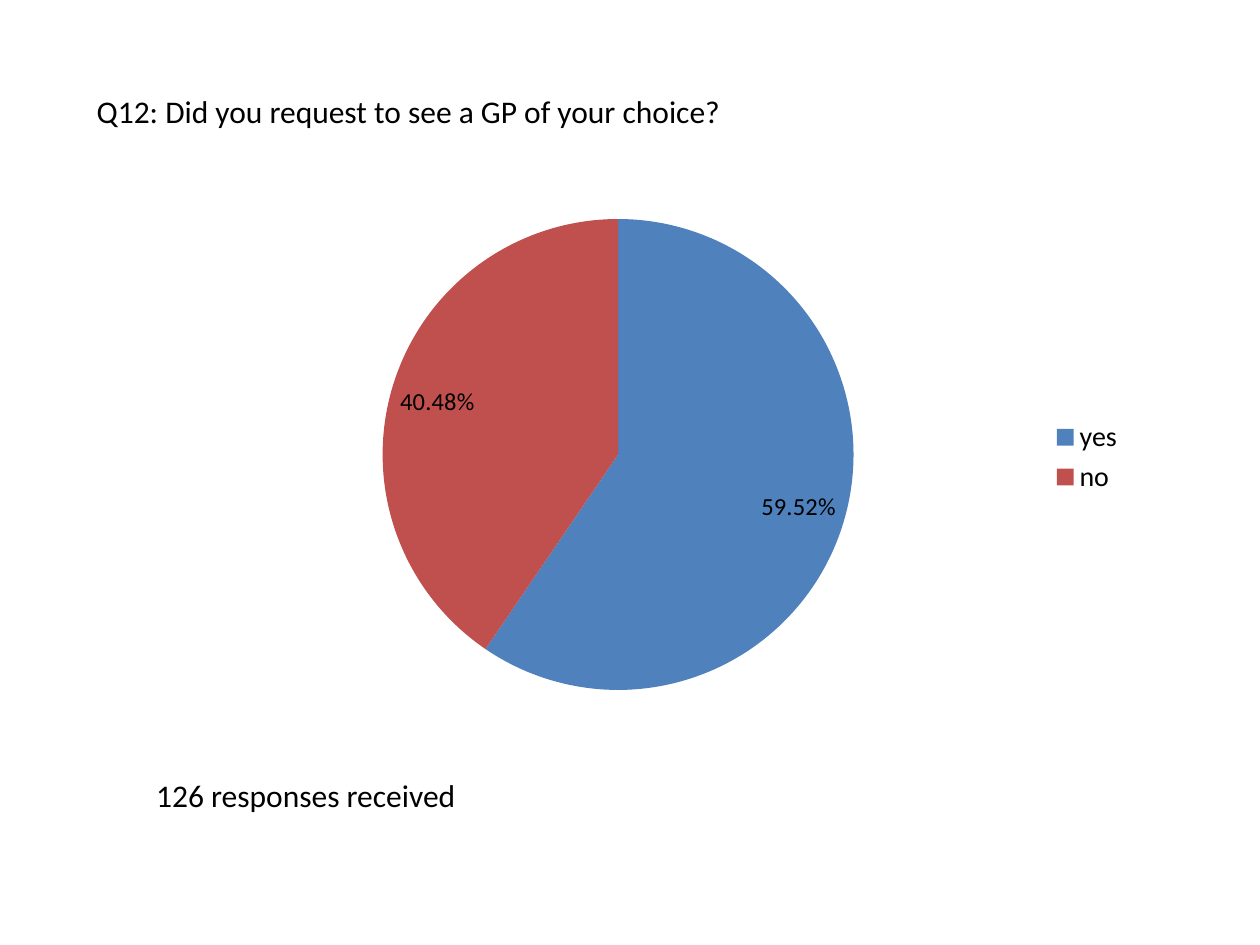
from dataclasses import dataclass

from lxml import etree
from pptx import Presentation
from pptx import util as u
from pptx.chart import data as cd
from pptx.dml import color as col
from pptx.enum import chart as ch, text as tx
from pptx.oxml import ns

FONT = "Calibri"
HUES = {"ink": "000000", "yes": "4F81BD", "no": "C0504D"}
VOTES = {"yes": 0.5952, "no": 0.4048}


@dataclass
class Note:
    words: str
    left: float
    top: float
    width: float


NOTES = [
    Note("Q12: Did you request to see a GP of your choice?", 1.7, 1.73, 20.4),
    Note("126 responses received", 2.9, 15.52, 19.6),
]


def tint(name: str) -> col.RGBColor:
    return col.RGBColor.from_string(HUES[name])


def style(font, size: int) -> None:
    font.name = FONT
    font.size = u.Pt(size)
    font.color.rgb = tint("ink")


def add_note(slide, note: Note) -> None:
    box = slide.shapes.add_textbox(
        u.Cm(note.left), u.Cm(note.top), u.Cm(note.width), u.Cm(1.02))
    frame = box.text_frame
    frame.word_wrap = True
    frame.auto_size = tx.MSO_AUTO_SIZE.SHAPE_TO_FIT_TEXT
    run = frame.paragraphs[0].add_run()
    run.text = note.words
    style(run.font, 18)


def set_plot(chart, **area: float) -> None:
    """Fix the inner plot area, in fractions of the chart frame."""
    plot = chart.plots[0]._element.getparent()
    for old in plot.findall(ns.qn("c:layout")):
        plot.remove(old)
    layout = etree.Element(ns.qn("c:layout"))
    plot.insert(0, layout)
    manual = etree.SubElement(layout, ns.qn("c:manualLayout"))
    parts = {"layoutTarget": "inner", "xMode": "edge", "yMode": "edge", **area}
    for tag, val in parts.items():
        etree.SubElement(manual, ns.qn(f"c:{tag}")).set("val", str(val))


def add_pie(slide) -> None:
    data = cd.CategoryChartData(number_format="0.00%")
    data.categories = list(VOTES)
    data.add_series("Series 1", list(VOTES.values()))
    chart = slide.shapes.add_chart(
        ch.XL_CHART_TYPE.PIE, u.Cm(3.91), u.Cm(4.11),
        u.Cm(19), u.Cm(10.21), data).chart
    chart.has_title = False
    style(chart.font, 10)
    set_plot(chart, x=0.2, y=0.03, w=0.5, h=0.93)

    # Legend
    chart.has_legend = True
    chart.legend.position = ch.XL_LEGEND_POSITION.RIGHT
    chart.legend.include_in_layout = False
    style(chart.legend.font, 16)

    # Slices and their labels
    plot = chart.plots[0]
    plot.vary_by_categories = True
    pie = plot.series[0]
    for i, name in enumerate(VOTES):
        fill = pie.points[i].format.fill
        fill.solid()
        fill.fore_color.rgb = tint(name)
    tags = pie.data_labels
    tags.show_value = True
    tags.number_format = "0.00%"
    tags.number_format_is_linked = False
    tags.position = ch.XL_LABEL_POSITION.INSIDE_END
    style(tags.font, 14)


def main() -> None:
    deck = Presentation()
    deck.slide_width, deck.slide_height = u.Cm(25.4), u.Cm(19.05)
    slide = deck.slides.add_slide(deck.slide_layouts[6])
    add_pie(slide)
    for note in NOTES:
        add_note(slide, note)
    deck.save("out.pptx")


if __name__ == "__main__":
    main()
